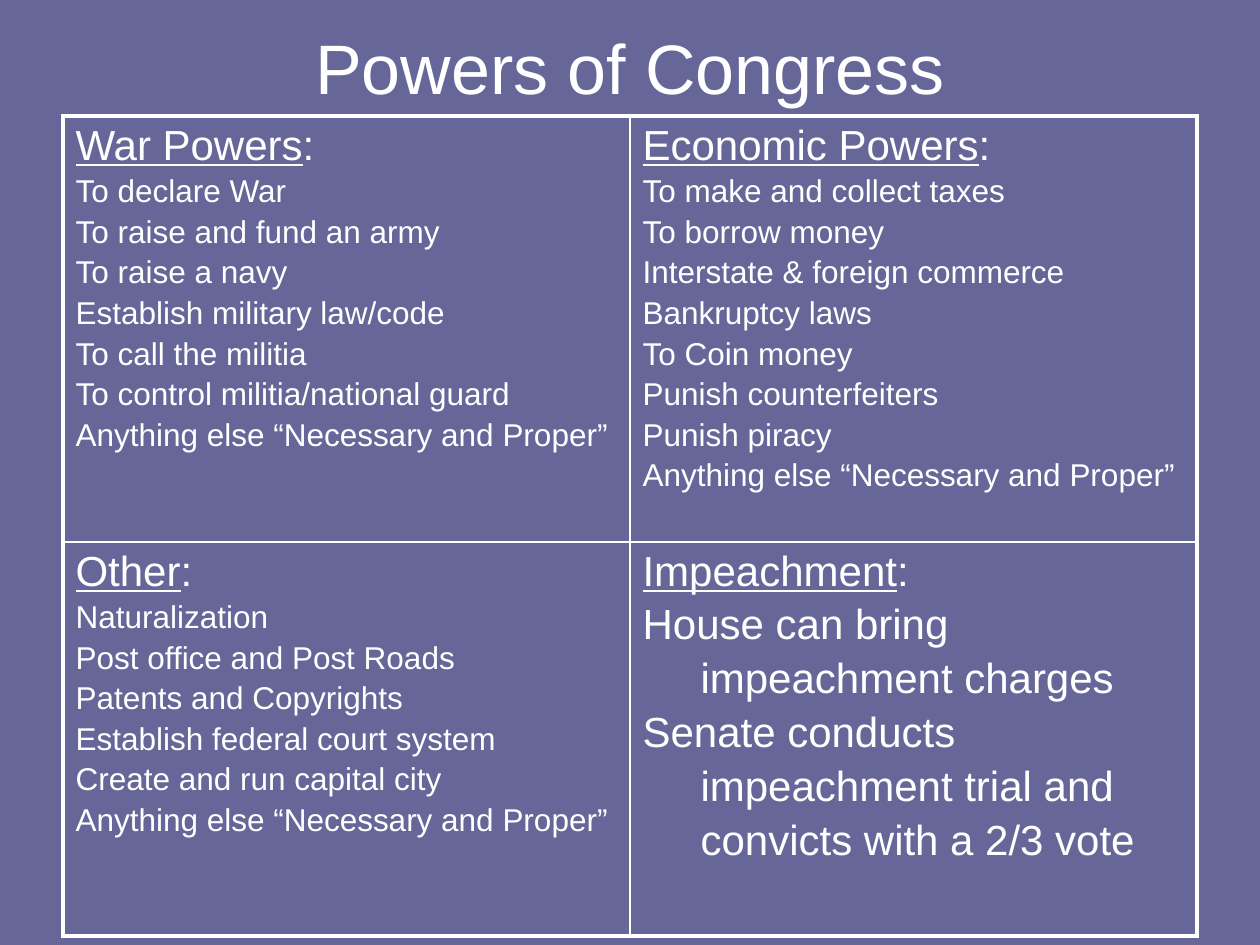
from lxml.etree import SubElement
from pptx import Presentation
from pptx.dml.color import RGBColor
from pptx.enum.text import MSO_ANCHOR as Anchor, PP_ALIGN as Align
from pptx.oxml import parse_xml
from pptx.oxml.ns import nsdecls, qn
from pptx.util import Inches, Pt

FONT = "Arial"
WHITE = "FFFFFF"
BACKGROUND = "666699"
OUTER_LINE, INNER_LINE = 2.25, 1
HEADING_SIZE, ITEM_SIZE = 24, 18
CATCH_ALL = "Anything else “Necessary and Proper”"

# Each quadrant: heading, item size, and items as (text, is indented)
QUADRANTS = [
    [
        ("War Powers", ITEM_SIZE, [(text, False) for text in (
            "To declare War", "To raise and fund an army", "To raise a navy",
            "Establish military law/code", "To call the militia",
            "To control militia/national guard", CATCH_ALL)]),
        ("Economic Powers", ITEM_SIZE, [(text, False) for text in (
            "To make and collect taxes", "To borrow money",
            "Interstate & foreign commerce", "Bankruptcy laws",
            "To Coin money", "Punish counterfeiters", "Punish piracy",
            CATCH_ALL)]),
    ],
    [
        ("Other", ITEM_SIZE, [(text, False) for text in (
            "Naturalization", "Post office and Post Roads",
            "Patents and Copyrights", "Establish federal court system",
            "Create and run capital city", CATCH_ALL)]),
        ("Impeachment", HEADING_SIZE, [
            ("House can bring", False), ("impeachment charges", True),
            ("Senate conducts", False), ("impeachment trial and", True),
            ("convicts with a 2/3 vote", True)]),
    ],
]


def color(hex_string):
    return RGBColor.from_string(hex_string)


def style(paragraph, size):
    paragraph.font.name = FONT
    paragraph.font.size = Pt(size)
    paragraph.font.color.rgb = color(WHITE)


def add_title(slide, left, top, width, height):
    title = slide.shapes.add_textbox(left, top, width, height).text_frame
    title.word_wrap = True
    title.vertical_anchor = Anchor.MIDDLE
    heading = title.paragraphs[0]
    heading.text = "Powers of Congress"
    heading.alignment = Align.CENTER
    style(heading, 40)


def set_borders(cell, widths):
    """Draw the cell's borders; widths are left, right, top, bottom in points."""
    properties = cell._tc.get_or_add_tcPr()
    for position, (side, width) in enumerate(zip("LRTB", widths)):
        line = parse_xml(f'<a:ln{side} {nsdecls("a")} w="{Pt(width)}"/>')
        fill = SubElement(line, qn("a:solidFill"))
        SubElement(fill, qn("a:srgbClr"), val=WHITE)
        properties.insert(position, line)


def fill_quadrant(cell, heading, item_size, items):
    cell.fill.background()
    frame = cell.text_frame

    # Underlined heading with a plain colon
    title = frame.paragraphs[0]
    style(title, HEADING_SIZE)
    name = title.add_run()
    name.text = heading
    name.font.underline = True
    title.add_run().text = ":"

    # Powers
    for text, indented in items:
        power = frame.add_paragraph()
        power.text = text
        power.space_before = Pt(item_size / 6)
        style(power, item_size)
        if indented:
            power._p.get_or_add_pPr().set("marL", str(Inches(0.46)))


def add_powers_table(slide, left, top, width, row_heights):
    table = slide.shapes.add_table(
        2, 2, left, top, width, sum(row_heights)).table
    table.first_row = table.horz_banding = False
    for row, height in zip(table.rows, row_heights):
        row.height = height
    for r, quadrants in enumerate(QUADRANTS):
        for c, quadrant in enumerate(quadrants):
            cell = table.cell(r, c)
            fill_quadrant(cell, *quadrant)
            edges = (c == 0, c == 1, r == 0, r == 1)
            set_borders(cell, [OUTER_LINE if outer else INNER_LINE
                               for outer in edges])


def main():
    prs = Presentation()
    prs.slide_width, prs.slide_height = Inches(10), Inches(7.5)
    slide = prs.slides.add_slide(prs.slide_layouts[6])
    slide.background.fill.solid()
    slide.background.fill.fore_color.rgb = color(BACKGROUND)

    add_title(slide, Inches(0.5), Inches(0.3), Inches(9), Inches(0.45))
    add_powers_table(slide, Inches(0.5), Inches(0.92), Inches(9),
                     [Inches(3.38), Inches(3.13)])
    prs.save("out.pptx")


if __name__ == "__main__":
    main()
